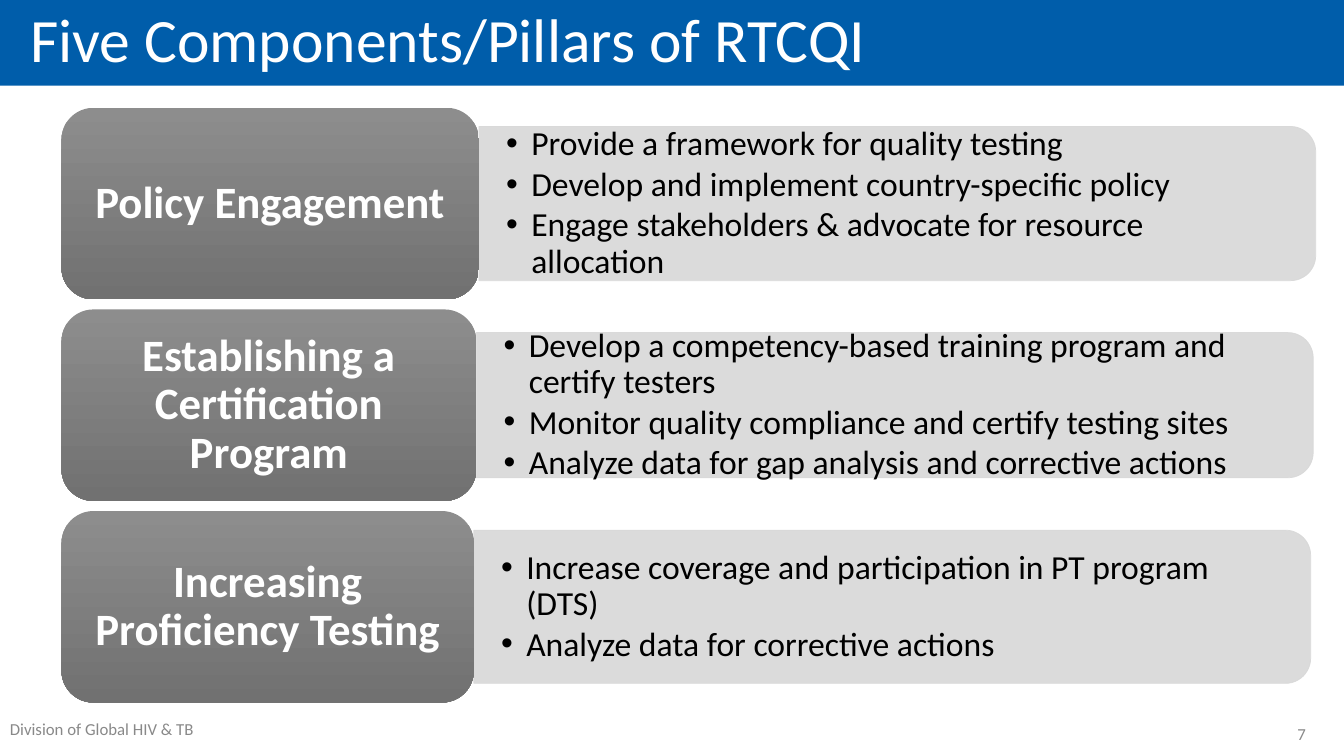
from math import cos, pi, sin

from lxml.etree import SubElement
from pptx import Presentation
from pptx.dml.color import RGBColor
from pptx.enum.shapes import MSO_SHAPE
from pptx.enum.text import MSO_ANCHOR, MSO_AUTO_SIZE, PP_ALIGN
from pptx.oxml.ns import qn
from pptx.util import Inches, Pt

BLUE = RGBColor(0x00, 0x5D, 0xAA)
WHITE = RGBColor(0xFF, 0xFF, 0xFF)
BLACK = RGBColor(0x00, 0x00, 0x00)
PALE = RGBColor(0xD8, 0xD8, 0xD8)
LIGHT = RGBColor(0x8D, 0x8D, 0x8D)
DARK = RGBColor(0x71, 0x71, 0x71)
MUTED = RGBColor(0x89, 0x89, 0x89)

LEFT, TOP, PITCH, TALL = 0.61, 1.07, 2.0, 1.9
SPLIT, STEP, WIDE = 4.75, 0.025, 8.3

# Heading, panel height, bullet points
PILLARS = [
    ("Policy Engagement", 1.53, [
        "Provide a framework for quality testing",
        "Develop and implement country-specific policy",
        "Engage stakeholders & advocate for resource allocation"]),
    ("Establishing a Certification Program", 1.44, [
        "Develop a competency-based training program and certify testers",
        "Monitor quality compliance and certify testing sites",
        "Analyze data for gap analysis and corrective actions"]),
    ("Increasing Proficiency Testing", 1.52, [
        "Increase coverage and participation in PT program (DTS)",
        "Analyze data for corrective actions"]),
]


def set_frame(frame, insets, anchor=MSO_ANCHOR.MIDDLE):
    frame.word_wrap = True
    frame.auto_size = MSO_AUTO_SIZE.NONE
    frame.vertical_anchor = anchor
    (frame.margin_left, frame.margin_top,
     frame.margin_right, frame.margin_bottom) = map(Inches, insets)


def style(para, size, color, align=PP_ALIGN.LEFT, bold=False, lines=0.9):
    para.alignment = align
    para.line_spacing = lines
    for run in para.runs:
        font = run.font
        font.name, font.size, font.bold = "Calibri", Pt(size), bold
        font.color.rgb = color


def add_bullet(para):
    props = para._p.get_or_add_pPr()
    props.set("marL", str(Inches(0.25)))
    props.set("indent", str(-Inches(0.25)))
    SubElement(props, qn("a:buFont"), typeface="Arial")
    SubElement(props, qn("a:buChar"), char="•")


def fade(shape):
    for color in shape._element.spPr.iter(qn("a:srgbClr")):
        SubElement(color, qn("a:alpha"), val="90000")


def add_title(slide, text):
    title = slide.shapes.title
    title.left, title.top = Inches(0), Inches(-0.01)
    title.width, title.height = Inches(13.33), Inches(0.86)
    title.fill.solid()
    title.fill.fore_color.rgb = BLUE
    title.text_frame.text = text
    set_frame(title.text_frame, (0.3, 0.05, 0.3, 0.05))
    style(title.text_frame.paragraphs[0], 44, WHITE)


def add_note(slide, text, left, width, align, anchor):
    box = slide.shapes.add_textbox(
        Inches(left), Inches(7.08), Inches(width), Inches(0.4))
    box.text_frame.text = text
    set_frame(box.text_frame, (0.1, 0.05, 0.1, 0.05), anchor)
    style(box.text_frame.paragraphs[0], 12, MUTED, align, lines=1.0)


def add_panel(slide, left, top, height, points):
    # Square on the left, rounded on the right
    radius, right, base = 0.25, left + WIDE, top + height
    turns = [i * pi / 24 for i in range(13)]
    upper = [(right - radius + radius * sin(t),
              top + radius - radius * cos(t)) for t in turns]
    lower = [(right - radius + radius * cos(t),
              base - radius + radius * sin(t)) for t in turns]
    edge = [(Inches(x), Inches(y)) for x, y in upper + lower + [(left, base)]]
    form = slide.shapes.build_freeform(Inches(left), Inches(top))
    form.add_line_segments(edge, close=True)
    panel = form.convert_to_shape()
    panel.shadow.inherit = False
    panel.fill.solid()
    panel.fill.fore_color.rgb = PALE
    panel.line.color.rgb = PALE
    panel.line.width = Pt(0.5)
    fade(panel)

    frame = panel.text_frame
    frame.text = "\n".join(points)
    set_frame(frame, (0.27, 0.21, 0.35, 0.21))
    for para in frame.paragraphs:
        style(para, 24, BLACK)
        para.space_after = Pt(3)
        add_bullet(para)


def add_head(slide, top, width, text):
    head = slide.shapes.add_shape(
        MSO_SHAPE.ROUNDED_RECTANGLE,
        Inches(LEFT), Inches(top), Inches(width), Inches(TALL))
    head.shadow.inherit = False
    head.line.fill.background()
    head.fill.gradient()
    head.fill.gradient_angle = 270
    for stop, color in zip(head.fill.gradient_stops, (LIGHT, DARK)):
        stop.color.rgb = color
    head.text_frame.text = text
    set_frame(head.text_frame, (0.14, 0.07, 0.14, 0.07))
    style(head.text_frame.paragraphs[0], 32, WHITE, PP_ALIGN.CENTER, True)


def main():
    deck = Presentation()
    deck.slide_width, deck.slide_height = Inches(13.33), Inches(7.5)
    slide = deck.slides.add_slide(deck.slide_layouts[5])

    add_title(slide, "Five Components/Pillars of RTCQI")

    # One row per pillar, each split slightly further left
    for i, (name, height, points) in enumerate(PILLARS):
        top, split = TOP + i * PITCH, SPLIT - i * STEP
        add_panel(slide, split, top + (TALL - height) / 2, height, points)
        add_head(slide, top, split - LEFT, name)

    # Footer
    add_note(slide, "Division of Global HIV & TB", 0, 2.17,
             PP_ALIGN.LEFT, MSO_ANCHOR.TOP)
    add_note(slide, "7", 11.9, 1.15, PP_ALIGN.RIGHT, MSO_ANCHOR.MIDDLE)

    deck.save("out.pptx")


if __name__ == "__main__":
    main()
